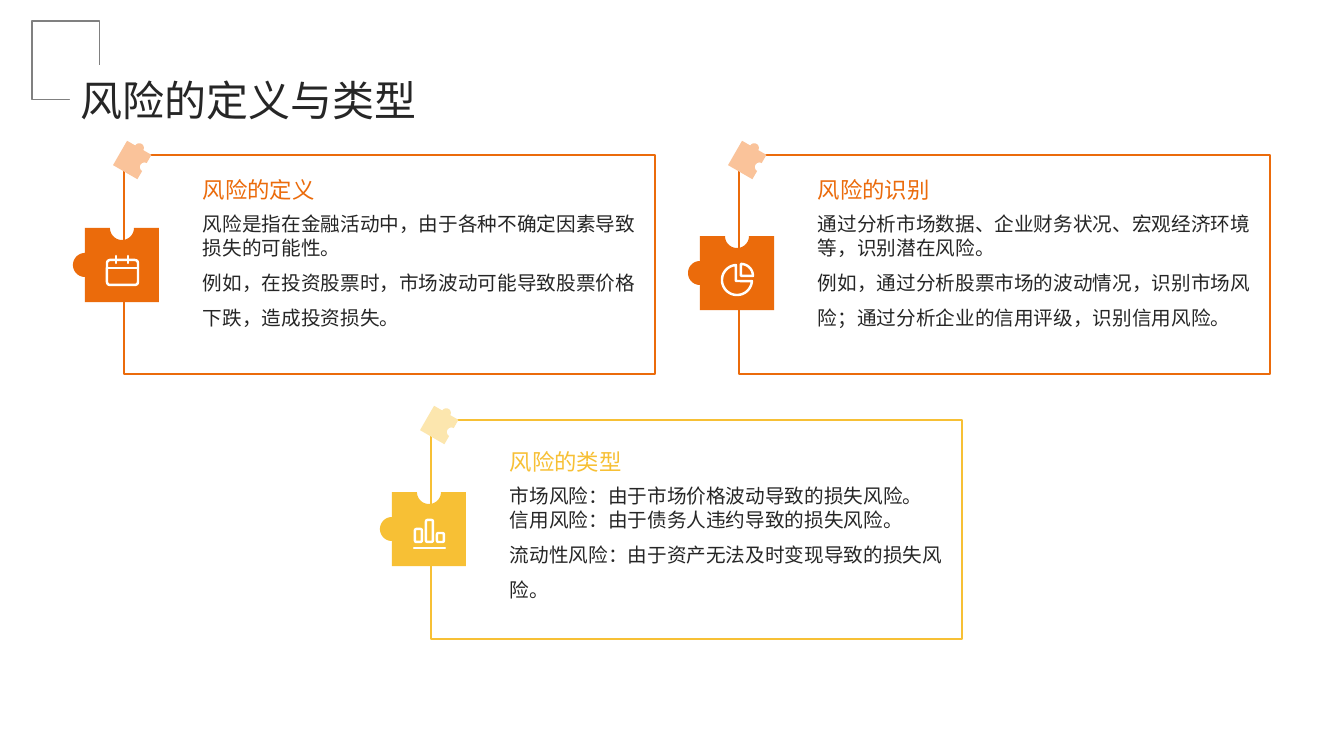
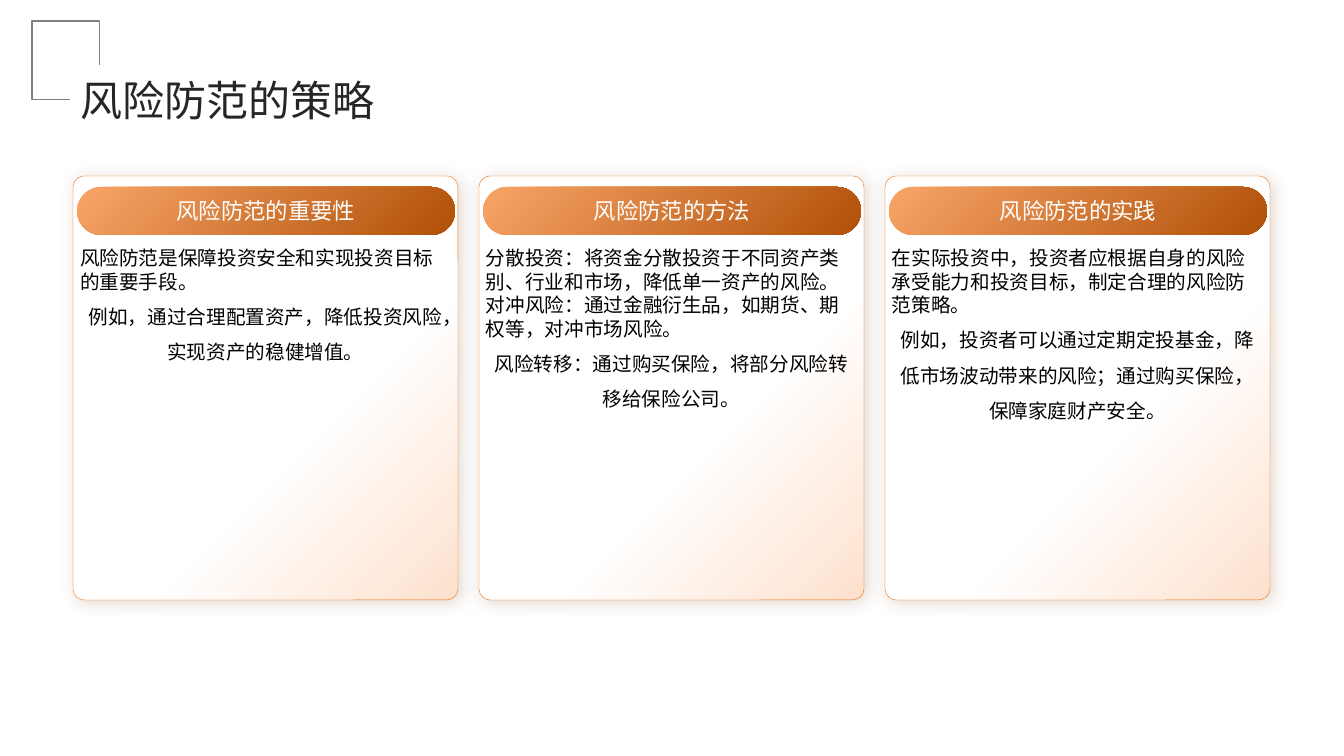
import math
import pptx
import pptx.util
import pptx.dml.color
import pptx.enum.shapes
import pptx.enum.text
import pptx.oxml
import pptx.oxml.ns

FONT = "Noto Sans CJK SC"
UNIT = 12192000 / 1344
INK, WHITE, BLACK, GREY = "262626", "FFFFFF", "000000", "808080"
ORANGE, PEACH = "EB6B0B", "FAC39A"
GOLD, CREAM = "F7C035", "FCE6AE"
KIND = pptx.enum.shapes.MSO_SHAPE
ALIGN = pptx.enum.text.PP_ALIGN
ANCHOR = pptx.enum.text.MSO_ANCHOR


def arc(x, y, r, start, end):
    steps = 40
    turns = [math.radians(start + (end - start) * i / steps) for i in range(steps + 1)]
    return [(x + r * math.cos(a), y + r * math.sin(a)) for a in turns]


PUZZLE = [(12, 0), *arc(49, 0, 12, 180, 0), (86, 0), (86, 74), (12, 74),
          *arc(12, 37, 12, 90, 270)]
ICONS = {
    "date": {"boxes": [(1, 5, 31, 25)],
             "lines": [(1, 13, 32, 13), (10, 1, 10, 8), (22, 1, 22, 8)]},
    "pie": {"loops": [[(15, 18), *arc(16, 17, 15, 4, 266)],
                      [(20, 13), *arc(20, 13, 12, 270, 360)]]},
    "bars": {"boxes": [(2, 10, 7, 13), (13, 1, 7, 22), (24, 14, 7, 9)],
             "lines": [(1, 29, 32, 29)]},
}

TYPES = {
    "title": "风险的定义与类型",
    "cards": [
        {"at": (124, 155), "main": ORANGE, "pale": PEACH, "icon": "date",
         "drop": 73, "shift": 0, "head": "风险的定义",
         "body": ["风险是指在金融活动中，由于各种不确定因素导致损失的可能性。",
                  "例如，在投资股票时，市场波动可能导致股票价格下跌，造成投资损失。"]},
        {"at": (739, 155), "main": ORANGE, "pale": PEACH, "icon": "pie",
         "drop": 81, "shift": 0, "head": "风险的识别",
         "body": ["通过分析市场数据、企业财务状况、宏观经济环境等，识别潜在风险。",
                  "例如，通过分析股票市场的波动情况，识别市场风险；通过分析企业的信用评级，识别信用风险。"]},
        {"at": (431, 420), "main": GOLD, "pale": CREAM, "icon": "bars",
         "drop": 72, "shift": 7, "head": "风险的类型",
         "body": ["市场风险：由于市场价格波动导致的损失风险。",
                  "信用风险：由于债务人违约导致的损失风险。",
                  "流动性风险：由于资产无法及时变现导致的损失风险。"]},
    ],
}
PLANS = {
    "title": "风险防范的策略",
    "cards": [
        ("风险防范的重要性",
         ["风险防范是保障投资安全和实现投资目标的重要手段。",
          "例如，通过合理配置资产，降低投资风险，实现资产的稳健增值。"]),
        ("风险防范的方法",
         ["分散投资：将资金分散投资于不同资产类别、行业和市场，降低单一资产的风险。",
          "对冲风险：通过金融衍生品，如期货、期权等，对冲市场风险。",
          "风险转移：通过购买保险，将部分风险转移给保险公司。"]),
        ("风险防范的实践",
         ["在实际投资中，投资者应根据自身的风险承受能力和投资目标，制定合理的风险防范策略。",
          "例如，投资者可以通过定期定投基金，降低市场波动带来的风险；通过购买保险，保障家庭财产安全。"]),
    ],
}


def px(*nums):
    return [round(n * UNIT) for n in nums]


def rgb(code):
    return pptx.dml.color.RGBColor.from_string(code)


def paint(shape, fill=None, line=None, width=1):
    shape.shadow.inherit = False
    if fill:
        shape.fill.solid()
        shape.fill.fore_color.rgb = rgb(fill)
    else:
        shape.fill.background()
    if line:
        shape.line.color.rgb = rgb(line)
        shape.line.width = pptx.util.Pt(width)
    else:
        shape.line.fill.background()
    return shape


def block(slide, kind, box, **look):
    return paint(slide.shapes.add_shape(kind, *px(*box)), **look)


def blend(shape, stops):
    shape.fill.gradient()
    shape.fill.gradient_angle = 315
    for stop, (place, code) in zip(shape.fill.gradient_stops, stops):
        stop.position = place
        stop.color.rgb = rgb(code)


def shade(shape):
    glow = pptx.oxml.parse_xml(
        f'<a:outerShdw {pptx.oxml.ns.nsdecls("a")} blurRad="152400" dist="38100" '
        'dir="2700000" algn="tl" rotWithShape="0"><a:srgbClr val="763605">'
        '<a:alpha val="19000"/></a:srgbClr></a:outerShdw>')
    shape._element.spPr.find(pptx.oxml.ns.qn("a:effectLst")).append(glow)


def write(shape, lines, size, color, space=1.0, align=ALIGN.LEFT, anchor=ANCHOR.TOP):
    frame = shape.text_frame
    frame.word_wrap = True
    frame.vertical_anchor = anchor
    frame.margin_left = frame.margin_right = frame.margin_top = frame.margin_bottom = 0
    for i, line in enumerate(lines):
        para = frame.paragraphs[0] if i == 0 else frame.add_paragraph()
        last = i == len(lines) - 1
        para.alignment = align if last else ALIGN.LEFT
        para.line_spacing = space if last else 1.0
        para.space_before = para.space_after = pptx.util.Pt(0)
        run = para.add_run()
        run.text = line
        run.font.size = pptx.util.Pt(size)
        run.font.name = FONT
        run.font.color.rgb = rgb(color)
        east = pptx.oxml.parse_xml(
            f'<a:ea {pptx.oxml.ns.nsdecls("a")} typeface="{FONT}"/>')
        run.font._element.find(pptx.oxml.ns.qn("a:latin")).addnext(east)


def label(slide, box, lines, size, color, **style):
    write(slide.shapes.add_textbox(*px(*box)), lines, size, color, **style)


def outline(slide, x, y, points, **look):
    spots = [px(a, b) for a, b in points]
    path = slide.shapes.build_freeform(*spots[0])
    path.add_line_segments(spots[1:], close=True)
    return paint(path.convert_to_shape(*px(x, y)), **look)


def icon(slide, x, y, parts):
    pen = {"line": WHITE, "width": 1.75}
    for a, b, w, h in parts.get("boxes", []):
        box = block(slide, KIND.ROUNDED_RECTANGLE, (x + a, y + b, w, h), **pen)
        box.adjustments[0] = min(0.2, 3 / min(w, h))
    for loop in parts.get("loops", []):
        outline(slide, x, y, loop, **pen)
    for a, b, c, d in parts.get("lines", []):
        rule = slide.shapes.add_connector(
            pptx.enum.shapes.MSO_CONNECTOR.STRAIGHT, *px(x + a, y + b, x + c, y + d))
        rule.line.color.rgb = rgb(WHITE)
        rule.line.width = pptx.util.Pt(1.75)
        rule.line._get_or_add_ln().set("cap", "rnd")
        rule._element.spPr.append(
            pptx.oxml.parse_xml(f'<a:effectLst {pptx.oxml.ns.nsdecls("a")}/>'))


def start(deck):
    return deck.slides.add_slide(deck.slide_layouts[5])


def finish(slide, text):
    block(slide, KIND.RECTANGLE, (32, 21, 68, 79), line=GREY, width=0.75)
    block(slide, KIND.RECTANGLE, (70, 65, 62, 51), fill=WHITE)
    title = slide.shapes.title
    title.left, title.top, title.width, title.height = px(81, 69, 1119, 46)
    write(title, [text], 30, INK, space=1.1)
    title.text_frame.auto_size = pptx.enum.text.MSO_AUTO_SIZE.SHAPE_TO_FIT_TEXT
    slide.shapes._spTree.append(title._element)


def types(deck):
    slide = start(deck)
    for card in TYPES["cards"]:
        x, y = card["at"]
        main, drop, shift = card["main"], card["drop"], card["shift"]
        block(slide, KIND.RECTANGLE, (x, y, 531, 219), fill=WHITE, line=main)
        label(slide, (x + 79, y + 57 + shift, 436, 123), card["body"], 14, INK, space=1.5)
        label(slide, (x + 79, y + 11 + shift, 436, 37), [card["head"]], 16, main,
              space=1.3, anchor=ANCHOR.BOTTOM)
        outline(slide, x - 51, y + drop, PUZZLE, fill=main)
        tab = outline(slide, x - 7, y - 11, [(a * 0.38, b * 0.38) for a, b in PUZZLE],
                      fill=card["pale"])
        tab.rotation = 120
        icon(slide, x - 18, y + drop + 27, ICONS[card["icon"]])
    finish(slide, TYPES["title"])


def plans(deck):
    slide = start(deck)
    y = 176
    for i, (head, body) in enumerate(PLANS["cards"]):
        x = 73 + 406 * i
        card = block(slide, KIND.ROUNDED_RECTANGLE, (x, y, 385, 424), line=ORANGE, width=0.25)
        card.adjustments[0] = 0.03
        blend(card, [(0.61, WHITE), (1, "FDE1CD")])
        shade(card)
        pill = block(slide, KIND.ROUNDED_RECTANGLE, (x + 4, y + 11, 378, 48))
        pill.adjustments[0] = 0.5
        blend(pill, [(0, "F8A568"), (1, "B05008")])
        write(pill, [head], 16, WHITE, align=ALIGN.CENTER, anchor=ANCHOR.MIDDLE)
        label(slide, (x + 7, y + 70, 371, 335), body, 14, BLACK,
              space=1.5, align=ALIGN.CENTER)
    finish(slide, PLANS["title"])


def main():
    deck = pptx.Presentation()
    deck.slide_width, deck.slide_height = px(1344, 756)
    types(deck)
    plans(deck)
    deck.save("out.pptx")


if __name__ == "__main__":
    main()
